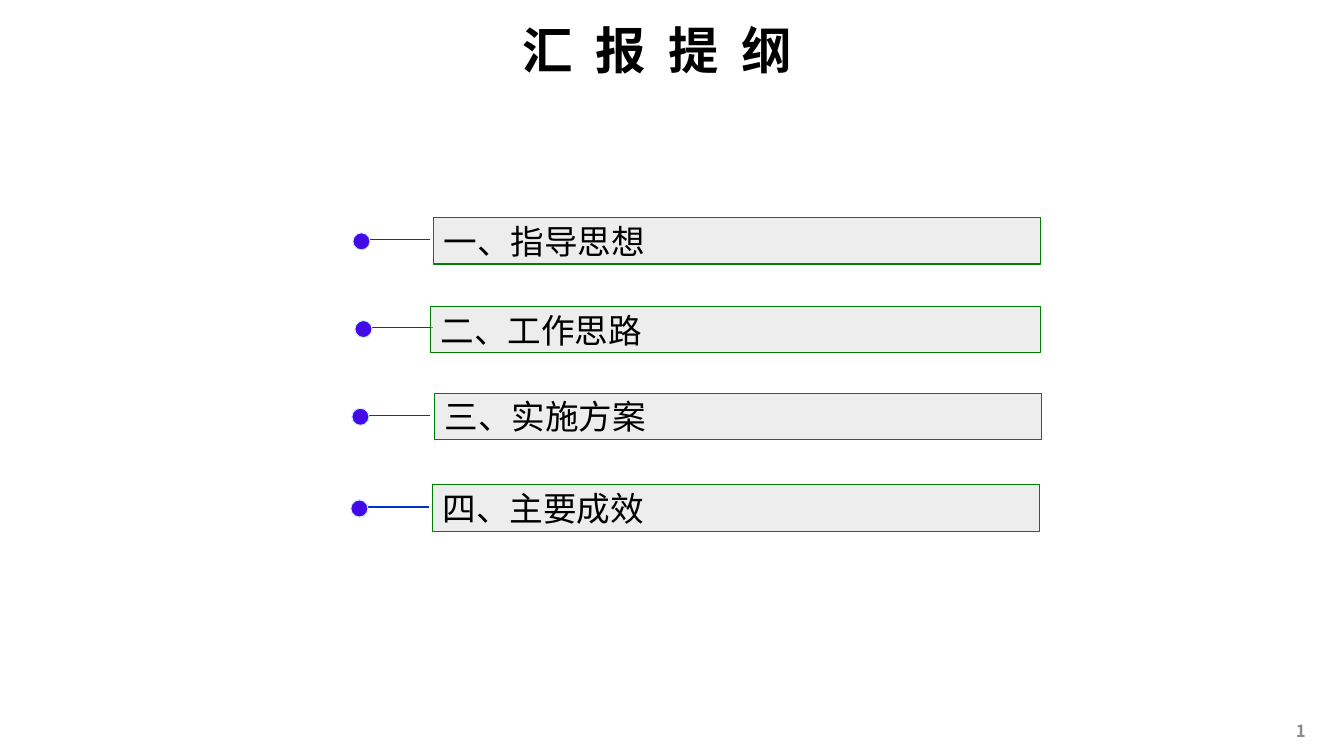
from lxml import etree
from pptx import Presentation
from pptx.dml.color import RGBColor
from pptx.enum.shapes import MSO_CONNECTOR as Link, MSO_SHAPE as Shape
from pptx.enum.text import MSO_ANCHOR as Anchor, PP_ALIGN as Align
from pptx.oxml.ns import qn
from pptx.util import Inches, Pt

SANS = "Noto Sans CJK SC"
SERIF = "TeX Gyre Schola"
TITLE = "汇 报 提 纲"
PAGE = "1"
# label, dot (left, top), bar (left, top, width)
ITEMS = [
    ("一、指导思想", (3.5, 2.31), (4.3, 2.16, 6.02)),
    ("二、工作思路", (3.52, 3.18), (4.27, 3.04, 6.05)),
    ("三、实施方案", (3.49, 4.05), (4.31, 3.9, 6.02)),
    ("四、主要成效", (3.48, 4.96), (4.29, 4.81, 6.02)),
]
DOT, STEM, BAR = 0.17, 0.62, 0.46


def paint(target, color):
    target.solid()
    target.fore_color.rgb = RGBColor.from_string(color)


def stroke(shape, color):
    paint(shape.line.fill, color)
    shape.line.width = Pt(0.75)


def write(shape, text, size, align, color="000000", font=SANS, bold=False, gap=0):
    """Fill a shape with one run; gap is extra letter spacing in points."""
    frame = shape.text_frame
    frame.word_wrap = True
    frame.vertical_anchor = Anchor.MIDDLE
    para = frame.paragraphs[0]
    para.alignment = align
    run = para.add_run()
    run.text = text
    run.font.size = Pt(size)
    run.font.bold = bold
    run.font.name = font
    paint(run.font.fill, color)
    props = run.font._element
    etree.SubElement(props, qn("a:ea")).set("typeface", SANS)
    if gap:
        props.set("spc", str(gap * 100))


def add_box(shapes, kind, place, fill, line):
    box = shapes.add_shape(kind, *map(Inches, place))
    box.shadow.inherit = False
    paint(box.fill, fill)
    stroke(box, line)
    return box


def add_pin(slide, left, top):
    """Draw a dot with the line that leads to its bar."""
    group = slide.shapes.add_group_shape().shapes
    start, mid = left + 0.15, top + 0.07
    stem = group.add_connector(
        Link.STRAIGHT, *map(Inches, (start, mid, start + STEM, mid)))
    stroke(stem, "0033CC")
    etree.SubElement(stem._element.spPr, qn("a:effectLst"))
    add_box(group, Shape.OVAL, (left, top, DOT, DOT), "4309E7", "CCECFF")


def add_bar(slide, label, left, top, width):
    bar = add_box(slide.shapes, Shape.RECTANGLE, (left, top, width, BAR),
                  "DDDDDD", "008000")
    tint = bar.fill._xPr.find(qn("a:solidFill"))[0]
    etree.SubElement(tint, qn("a:alpha")).set("val", "51000")
    write(bar, label, 24, Align.LEFT)


def add_text(slide, place, *args, **style):
    write(slide.shapes.add_textbox(*map(Inches, place)), *args, **style)


def main():
    deck = Presentation()
    deck.slide_width, deck.slide_height = Inches(13.33), Inches(7.5)
    slide = deck.slides.add_slide(deck.slide_layouts[6])
    for label, dot, bar in ITEMS:
        add_pin(slide, *dot)
        add_bar(slide, label, *bar)
    add_text(slide, (1.55, 0.13, 9.94, 0.71), TITLE, 36, Align.CENTER,
             font=SERIF, bold=True, gap=4)
    add_text(slide, (10.05, 7.05, 3, 0.4), PAGE, 12, Align.RIGHT,
             color="8C8C8C", bold=True)
    deck.save("out.pptx")


if __name__ == "__main__":
    main()
